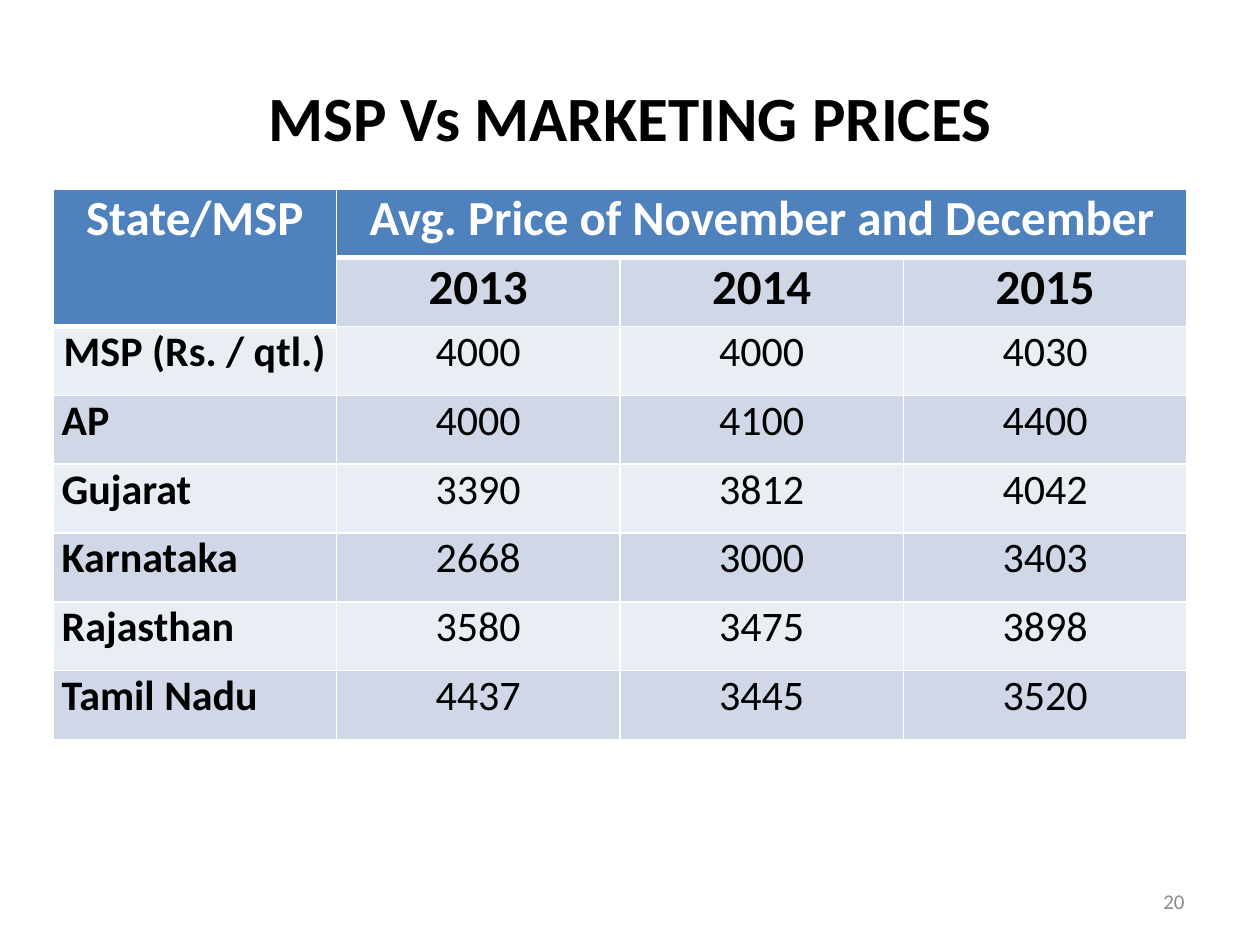
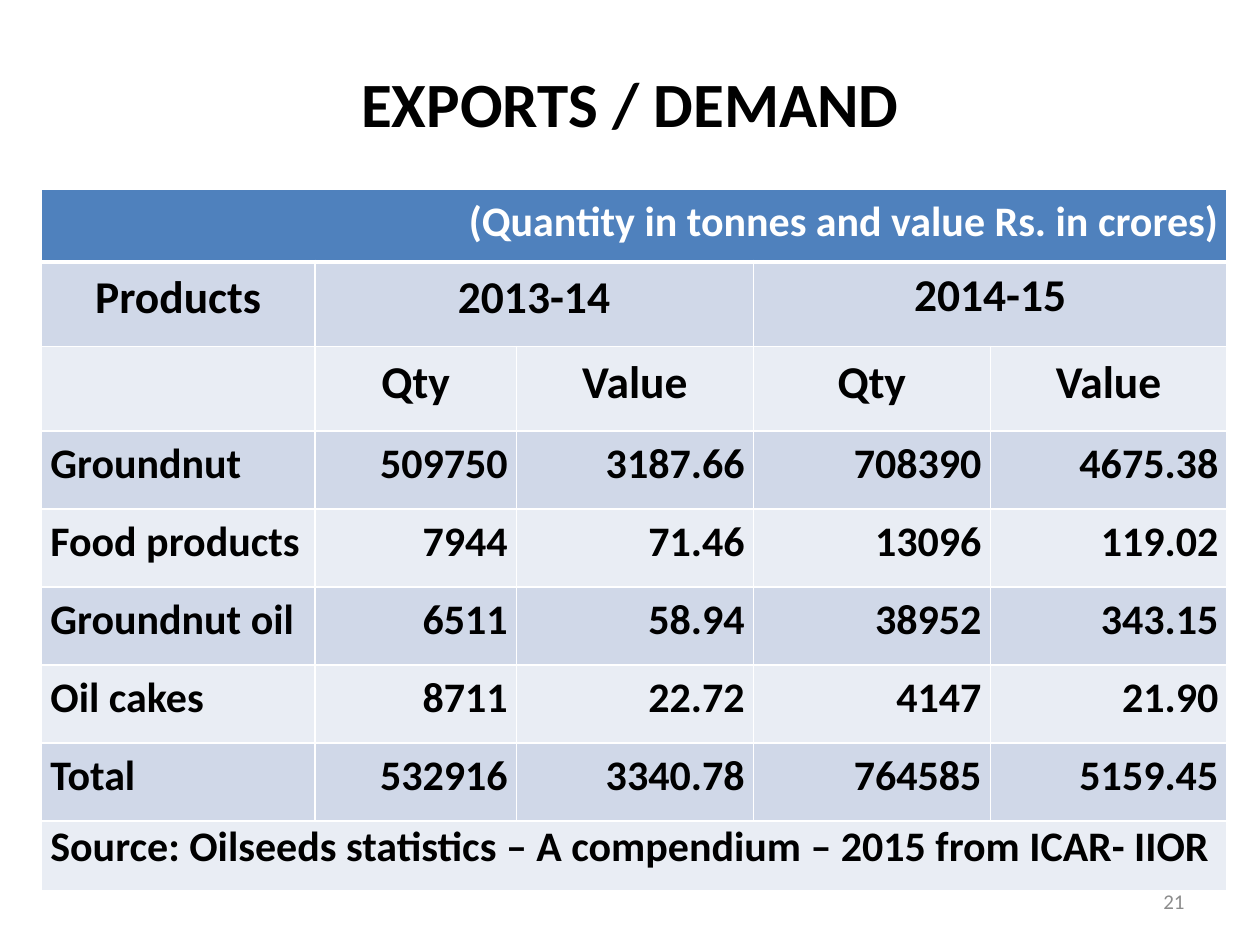
"""Build two slides of groundnut price and export tables."""
from lxml import etree
from pptx import Presentation
from pptx.dml.color import RGBColor
from pptx.enum import text
from pptx.oxml import ns
from pptx.util import Inches, Pt

FONT = "Calibri"
COLORS = {"head": "4F81BD", "odd": "D0D8E8", "even": "E9EDF4",
          "white": "FFFFFF", "black": "000000", "number": "8C8C8C"}
LEFT, CENTER, RIGHT = text.PP_ALIGN.LEFT, text.PP_ALIGN.CENTER, text.PP_ALIGN.RIGHT

PRICES = {
    "title": "MSP Vs MARKETING PRICES", "title_height": 1.25, "number": "20",
    "left": 0.42, "cols": [2.25] * 4, "rows": [4.37 / 8] * 8,
    "cells": [
        ["State/MSP", "Avg. Price of November and December"],
        ["", "2013", "2014", "2015"],
        ["MSP (Rs. / qtl.)", "4000", "4000", "4030"],
        ["AP", "4000", "4100", "4400"],
        ["Gujarat", "3390", "3812", "4042"],
        ["Karnataka", "2668", "3000", "3403"],
        ["Rajasthan", "3580", "3475", "3898"],
        ["Tamil Nadu", "4437", "3445", "3520"],
    ],
    "merges": [(0, 0, 1, 0), (0, 1, 0, 3)],
    "tall_head": [(1, 0)],
    "sizes": [28, 28] + [24] * 6,
    "aligns": [(CENTER, CENTER)] * 3 + [(LEFT, CENTER)] * 5,
    "plain_from": 2, "spacing": None, "single_spaced": [], "roomy": [],
}
EXPORTS = {
    "title": "EXPORTS / DEMAND", "title_height": 1.03, "number": "21",
    "left": 0.33, "cols": [2.17, 1.6] + [1.88] * 3,
    "rows": [0.58] + [0.67] * 2 + [0.62] * 5 + [0.55],
    "cells": [
        ["(Quantity in tonnes and value Rs. in crores)"],
        ["Products", "2013-14", "", "2014-15"],
        ["", "Qty", "Value", "Qty", "Value"],
        ["Groundnut", "509750", "3187.66", "708390", "4675.38"],
        ["Food products", "7944", "71.46", "13096", "119.02"],
        ["Groundnut oil", "6511", "58.94", "38952", "343.15"],
        ["Oil cakes", "8711", "22.72", "4147", "21.90"],
        ["Total", "532916", "3340.78", "764585", "5159.45"],
        ["Source: Oilseeds statistics – A compendium – 2015 from ICAR- IIOR"],
    ],
    "merges": [(0, 0, 0, 4), (1, 1, 1, 2), (1, 3, 1, 4), (8, 0, 8, 4)],
    "tall_head": [],
    "sizes": [24, 26, 26] + [24] * 6,
    "aligns": [(RIGHT, RIGHT)] + [(CENTER, CENTER)] * 2 + [(LEFT, RIGHT)] * 6,
    "plain_from": 9, "spacing": 1.15, "single_spaced": [(1, 3), (8, 0)],
    "roomy": [(1, 3)],
}


def rgb(name):
    return RGBColor.from_string(COLORS[name])


def style(p, size, color, align, bold=False):
    p.alignment = align
    for r in p.runs:
        r.font.name, r.font.size, r.font.bold = FONT, Pt(size), bold
        r.font.color.rgb = rgb(color)


def add_borders(cell, top, bottom):
    tc_pr = cell._tc.get_or_add_tcPr()
    for side, width in zip("LRTB", (1, 1, top, bottom)):
        ln = etree.SubElement(tc_pr, ns.qn(f"a:ln{side}"), w=str(Pt(width)))
        fill = etree.SubElement(ln, ns.qn("a:solidFill"))
        etree.SubElement(fill, ns.qn("a:srgbClr"), val=COLORS["white"])


def add_title(s, page):
    sp = s.shapes.title
    sp.left, sp.top = Inches(0.5), Inches(0.3)
    sp.width, sp.height = Inches(9), Inches(page["title_height"])
    tf = sp.text_frame
    tf.text = page["title"]
    tf.vertical_anchor = text.MSO_ANCHOR.MIDDLE
    style(tf.paragraphs[0], 36, "black", CENTER, True)


def add_number(s, number):
    tf = s.shapes.add_textbox(Inches(7.17), Inches(6.95), Inches(2.33), Inches(0.4)).text_frame
    tf.word_wrap = True
    tf.vertical_anchor = text.MSO_ANCHOR.MIDDLE
    tf.text = number
    style(tf.paragraphs[0], 12, "number", RIGHT)


def fill_cell(cell, page, row, col):
    def is_head(r):
        return r == 0 or (r, col) in page["tall_head"]

    head = is_head(row)
    add_borders(cell, 3 if row and not head and is_head(row - 1) else 1,
                3 if head and not is_head(row + 1) else 1)
    cell.fill.solid()
    cell.fill.fore_color.rgb = rgb("head" if head else "odd" if row % 2 else "even")
    if (row, col) not in page["roomy"]:
        cell.margin_left = cell.margin_right = Inches(0.07)
        cell.margin_top = cell.margin_bottom = 0
    words = page["cells"][row]
    if col < len(words) and words[col]:
        cell.text_frame.text = words[col]
        p = cell.text_frame.paragraphs[0]
        style(p, page["sizes"][row], "white" if head else "black",
              page["aligns"][row][col > 0], col == 0 or row < page["plain_from"])
        if (row, col) not in page["single_spaced"]:
            p.line_spacing = page["spacing"]


def add_table(s, page):
    cols, rows = page["cols"], page["rows"]
    table = s.shapes.add_table(len(rows), len(cols), Inches(page["left"]), Inches(1.5),
                               Inches(sum(cols)), Inches(sum(rows))).table
    for column, width in zip(table.columns, cols):
        column.width = Inches(width)
    for line, height in zip(table.rows, rows):
        line.height = Inches(height)
    for row in range(len(rows)):
        for col in range(len(cols)):
            fill_cell(table.cell(row, col), page, row, col)
    for top, left, bottom, right in page["merges"]:
        table.cell(top, left).merge(table.cell(bottom, right))


def main():
    prs = Presentation()
    prs.slide_width, prs.slide_height = Inches(10), Inches(7.5)
    for page in (PRICES, EXPORTS):
        s = prs.slides.add_slide(prs.slide_layouts[5])
        add_title(s, page)
        add_table(s, page)
        add_number(s, page["number"])
    prs.save("out.pptx")


if __name__ == "__main__":
    main()
